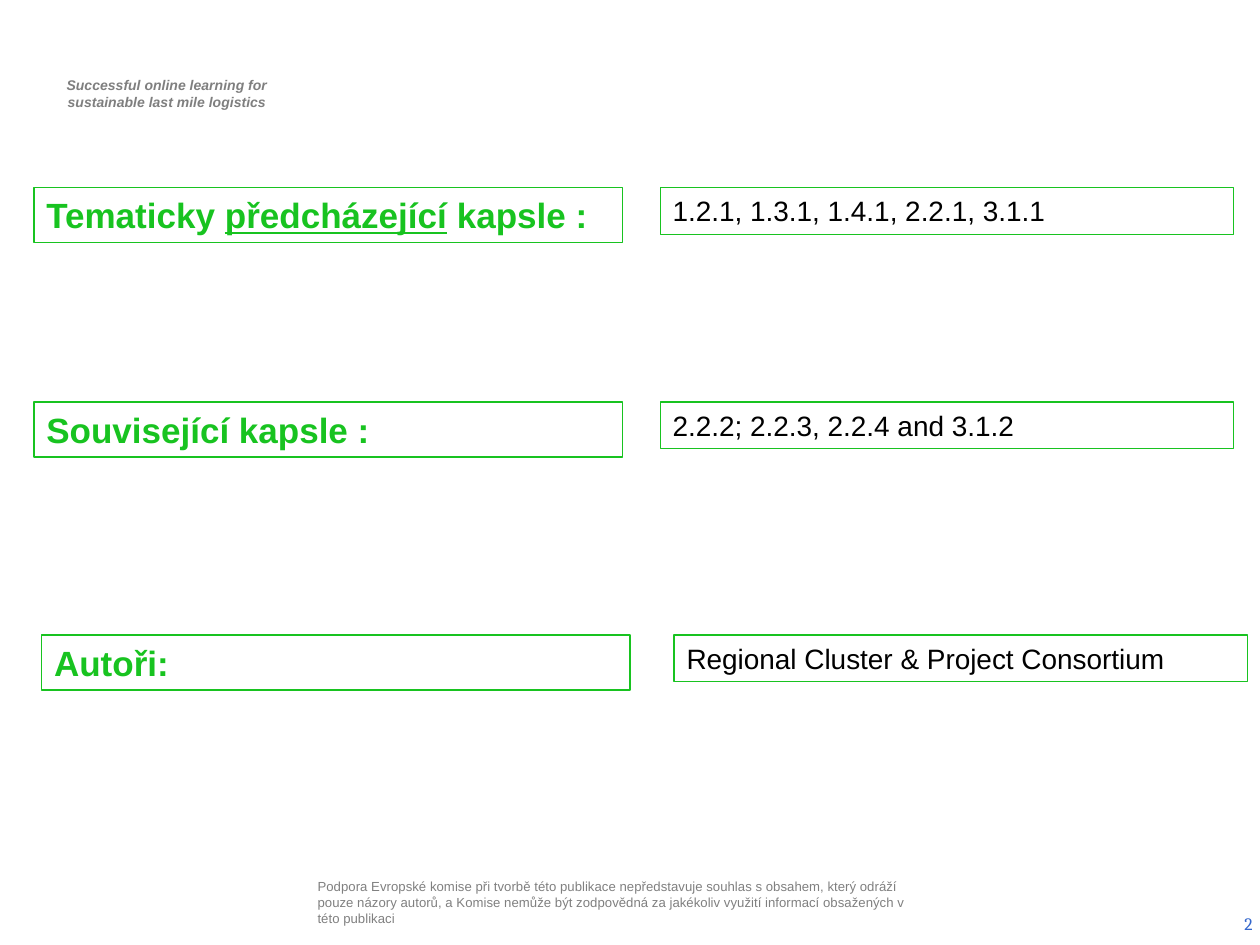
from dataclasses import dataclass

from pptx import Presentation
from pptx.dml.color import RGBColor
from pptx.enum import shapes, text
from pptx.util import Pt

GREEN, BLACK, WHITE = "18C320", "000000", "FFFFFF"
LABEL_SIZE = (336.2, 31.5)
VALUE_SIZE = (327.6, 26.6)


@dataclass
class CapsuleRow:
    top: float
    label_left: float
    value_left: float
    label: list[str]
    value: str
    underlined: str = ""


ROWS = [
    CapsuleRow(107.3, 19.4, 377.3, ["Tematicky ", "předcházející", " kapsle :"],
               "1.2.1, 1.3.1, 1.4.1, 2.2.1, 3.1.1", "předcházející"),
    CapsuleRow(229.7, 19.4, 377.3, ["Související kapsle :"],
               "2.2.2; 2.2.3, 2.2.4 and 3.1.2"),
    CapsuleRow(362.9, 23.8, 385.2, ["Autoři:"],
               "Regional Cluster & Project Consortium"),
]


def rgb(color: str) -> RGBColor:
    return RGBColor.from_string(color)


def write(sp, paragraphs: list[list[str]], *, size: float, color: str,
          font: str = "Arial", bold: bool = False, italic: bool = False,
          underlined: str = "", align=text.PP_ALIGN.LEFT,
          anchor=text.MSO_ANCHOR.TOP, margins: tuple = (7.2, 3.6),
          indent: float = 0) -> None:
    """Fill a shape with paragraphs, each given as a list of run texts."""
    tf = sp.text_frame
    tf.word_wrap = True
    tf.vertical_anchor = anchor
    tf.margin_left = tf.margin_right = Pt(margins[0])
    tf.margin_top = tf.margin_bottom = Pt(margins[1])
    for i, runs in enumerate(paragraphs):
        p = tf.add_paragraph() if i else tf.paragraphs[0]
        p.alignment = align
        if indent:
            p._p.get_or_add_pPr().set("marL", str(Pt(indent)))
        for words in runs:
            r = p.add_run()
            r.text = words
            f = r.font
            f.name, f.size, f.bold, f.italic = font, Pt(size), bold, italic
            f.color.rgb = rgb(color)
            if words == underlined:
                f.underline = True


def add_text(s, box: tuple, paragraphs: list[list[str]], **fmt) -> None:
    write(s.shapes.add_textbox(*map(Pt, box)), paragraphs, **fmt)


def add_frame(s, box: tuple, runs: list[str], **fmt) -> None:
    """Add a white rectangle with a green outline and one paragraph."""
    sp = s.shapes.add_shape(shapes.MSO_SHAPE.RECTANGLE, *map(Pt, box))
    sp.shadow.inherit = False
    sp.fill.solid()
    sp.fill.fore_color.rgb = rgb(WHITE)
    sp.line.color.rgb = rgb(GREEN)
    sp.line.width = Pt(0.75)
    write(sp, [runs], **fmt)
    sp.text_frame.auto_size = text.MSO_AUTO_SIZE.SHAPE_TO_FIT_TEXT


def main() -> None:
    prs = Presentation()
    prs.slide_width, prs.slide_height = Pt(720), Pt(540)
    s = prs.slides.add_slide(prs.slide_layouts[6])

    add_text(s, (20.9, 40.3, 146.2, 26.6),
             [["Successful online learning for"],
              ["sustainable last mile logistics"]],
             size=8, color="7F7F7F", bold=True, italic=True,
             align=text.PP_ALIGN.CENTER, indent=2.9)
    add_text(s, (178.6, 497.5, 343.4, 36),
             [["Podpora Evropské komise při tvorbě této publikace nepředstavuje "
               "souhlas s obsahem, který odráží pouze názory autorů, a Komise "
               "nemůže být zodpovědná za jakékoliv využití informací "
               "obsažených v této publikaci"]],
             size=7.5, color="808080", anchor=text.MSO_ANCHOR.MIDDLE,
             margins=(2.9, 2.9))
    add_text(s, (555.1, 513.4, 167.8, 28.8), [["2"]],
             size=10, color="3366CC", font="Cambria",
             align=text.PP_ALIGN.RIGHT, anchor=text.MSO_ANCHOR.MIDDLE)

    for row in ROWS:
        add_frame(s, (row.label_left, row.top, *LABEL_SIZE), row.label,
                  size=20, color=GREEN, bold=True, underlined=row.underlined)
        add_frame(s, (row.value_left, row.top, *VALUE_SIZE), [row.value],
                  size=16, color=BLACK)

    prs.save("out.pptx")


if __name__ == "__main__":
    main()
